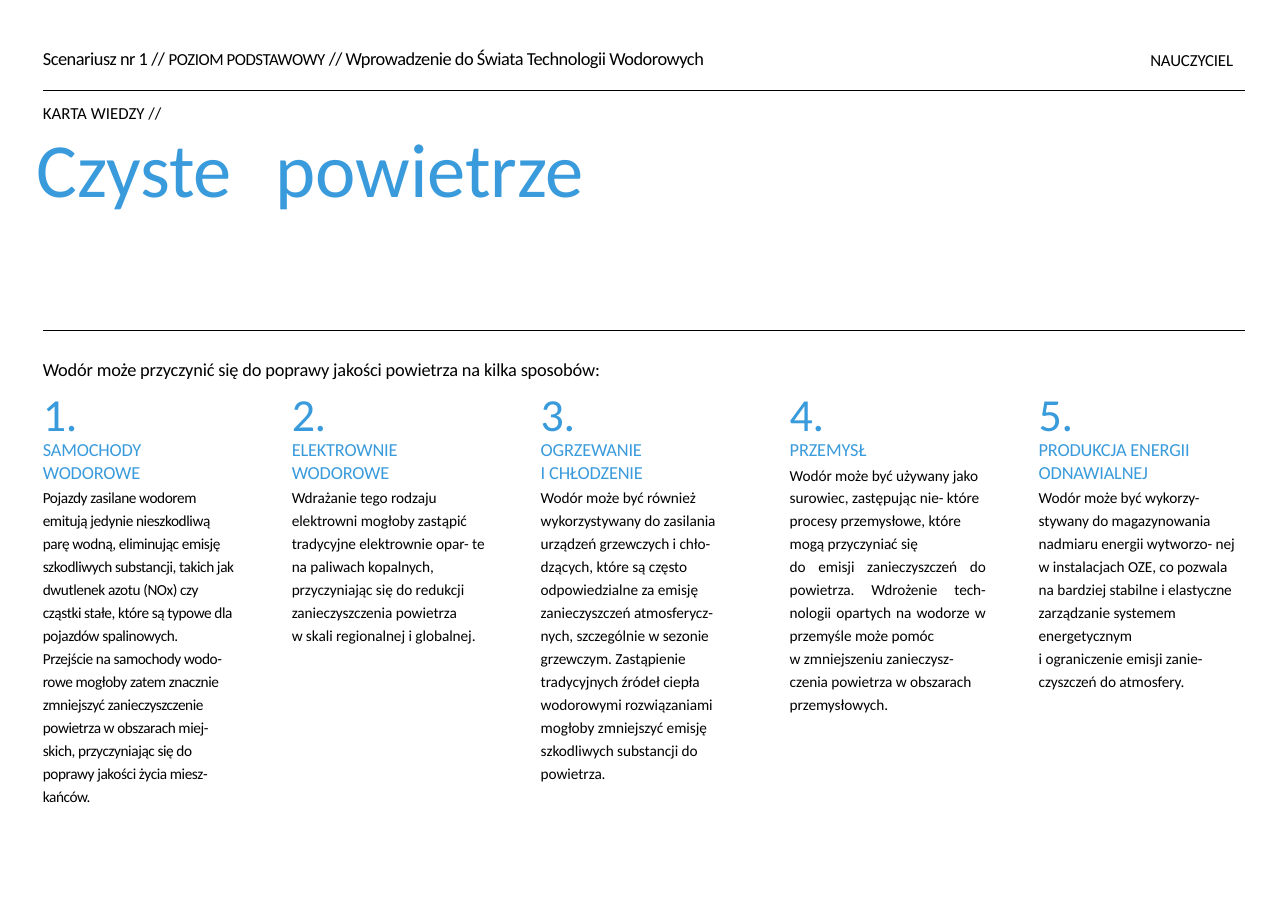
from lxml.etree import SubElement
from pptx import Presentation
from pptx.dml.color import RGBColor
from pptx.enum.shapes import MSO_CONNECTOR
from pptx.enum.text import MSO_ANCHOR, MSO_AUTO_SIZE, PP_ALIGN
from pptx.oxml.ns import qn
from pptx.util import Pt

COLORS = {"text": "000000", "accent": "3A9BDC"}
FONT = "Calibri"
LEFT, RIGHT = 28, 813.6
COLUMN_TOP, COLUMN_WIDTH, COLUMN_PITCH = 252.7, 128, 162.7

# Each column: height, letter spacing, heading lines, body paragraphs
COLUMNS = [
    (274, -0.25, ["SAMOCHODY", "WODOROWE"], [
        "Pojazdy zasilane wodorem emitują jedynie nieszkodliwą parę wodną, "
        "eliminując emisję szkodliwych substancji, takich jak dwutlenek azotu "
        "(NOx) czy cząstki stałe, które są typowe dla pojazdów spalinowych.",
        "Przejście na samochody wodo- rowe mogłoby zatem znacznie zmniejszyć "
        "zanieczyszczenie powietrza w obszarach miej- skich, przyczyniając się "
        "do poprawy jakości życia miesz- kańców."]),
    (169, -0.04, ["ELEKTROWNIE", "WODOROWE"], [
        "Wdrażanie tego rodzaju elektrowni mogłoby zastąpić tradycyjne "
        "elektrownie opar- te na paliwach kopalnych, przyczyniając się do "
        "redukcji zanieczyszczenia powietrza",
        "w skali regionalnej i globalnej."]),
    (259, -0.04, ["OGRZEWANIE", "I CHŁODZENIE"], [
        "Wodór może być również wykorzystywany do zasilania urządzeń grzewczych "
        "i chło- dzących, które są często odpowiedzialne za emisję "
        "zanieczyszczeń atmosferycz- nych, szczególnie w sezonie grzewczym. "
        "Zastąpienie tradycyjnych źródeł ciepła wodorowymi rozwiązaniami mogłoby "
        "zmniejszyć emisję szkodliwych substancji do powietrza."]),
    (214, -0.04, ["PRZEMYSŁ"], [
        "Wodór może być używany jako surowiec, zastępując nie- które procesy "
        "przemysłowe, które mogą przyczyniać się",
        "do emisji zanieczyszczeń do powietrza. Wdrożenie tech- nologii opartych "
        "na wodorze w przemyśle może pomóc",
        "w zmniejszeniu zanieczysz- czenia powietrza w obszarach przemysłowych."]),
    (199, -0.04, ["PRODUKCJA ENERGII", "ODNAWIALNEJ"], [
        "Wodór może być wykorzy- stywany do magazynowania nadmiaru energii "
        "wytworzo- nej w instalacjach OZE, co pozwala na bardziej stabilne "
        "i elastyczne zarządzanie systemem energetycznym",
        "i ograniczenie emisji zanie- czyszczeń do atmosfery."]),
]
JUSTIFIED = (3, 1)  # column and paragraph index


class Sheet:
    """Holds the current slide and the shared text and line style."""

    def __init__(self, slide):
        self.slide = slide

    def frame(self, sp, x, y, w, h):
        """Place a text shape and return its emptied frame without margins."""
        sp.left, sp.top, sp.width, sp.height = Pt(x), Pt(y), Pt(w), Pt(h)
        tf = sp.text_frame
        tf.word_wrap = True
        tf.auto_size = MSO_AUTO_SIZE.NONE
        tf.vertical_anchor = MSO_ANCHOR.TOP
        tf.margin_left = tf.margin_right = tf.margin_bottom = 0
        tf.margin_top = Pt(0.7)
        return tf

    def textbox(self, x, y, w, h):
        return self.frame(self.slide.shapes.add_textbox(0, 0, 0, 0), x, y, w, h)

    def title(self, text, x, y, w, h, tab):
        tf = self.frame(self.slide.shapes.title, x, y, w, h)
        p = self.paragraph(tf, text, 50, "accent", -0.1, line=57.6)
        tabs = SubElement(p._p.get_or_add_pPr(), qn("a:tabLst"))
        SubElement(tabs, qn("a:tab"), pos=str(Pt(tab)), algn="l")
        p._p.pPr.find(qn("a:defRPr")).addprevious(tabs)

    def run(self, p, text, spacing, size=None):
        r = p.add_run()
        r.text = text
        r._r.get_or_add_rPr().set("spc", str(round(spacing * 100)))
        if size:
            r.font.size = Pt(size)

    def paragraph(self, tf, text, size, color="text", spacing=-0.1,
                  before=0, line=None, align=PP_ALIGN.LEFT):
        """Fill the first paragraph if it is empty, otherwise add one."""
        p = tf.add_paragraph() if tf.paragraphs[0].runs else tf.paragraphs[0]
        p.alignment = align
        p.space_before = Pt(before)
        p.line_spacing = Pt(line) if line else 1.0
        p.font.name, p.font.size = FONT, Pt(size)
        p.font.color.rgb = RGBColor.from_string(COLORS[color])
        self.run(p, text, spacing)
        return p

    def rule(self, y):
        line = self.slide.shapes.add_connector(
            MSO_CONNECTOR.STRAIGHT, Pt(LEFT), Pt(y), Pt(RIGHT), Pt(y))
        line.line.width = Pt(0.5)
        line.line.color.rgb = RGBColor.from_string(COLORS["text"])
        SubElement(line._element.spPr, qn("a:effectLst"))

    def column(self, index, height, spacing, heading, body):
        tf = self.textbox(LEFT + index * COLUMN_PITCH, COLUMN_TOP, COLUMN_WIDTH, height)
        self.paragraph(tf, f"{index + 1}.", 30, "accent", -0.2, before=1, line=34.5)
        for i, text in enumerate(heading):
            self.paragraph(tf, text, 12, "accent", before=0.6 if i else 0,
                           line=None if i else 12.9)
        for i, text in enumerate(body):
            align = PP_ALIGN.JUSTIFY if (index, i) == JUSTIFIED else PP_ALIGN.LEFT
            self.paragraph(tf, text, 10, "text", spacing, before=0 if i else 0.6,
                           line=15, align=align)


def main():
    prs = Presentation()
    prs.slide_width, prs.slide_height = Pt(841.7), Pt(595.4)
    sheet = Sheet(prs.slides.add_slide(prs.slide_layouts[5]))

    tf = sheet.textbox(LEFT, 30.2, 478, 16.6)
    p = sheet.paragraph(tf, "Scenariusz nr 1 // ", 12, spacing=-0.3, before=1)
    sheet.run(p, "POZIOM PODSTAWOWY ", -0.3, 11)
    sheet.run(p, "// Wprowadzenie do Świata Technologii Wodorowych", -0.3)
    sheet.paragraph(sheet.textbox(751.7, 31.7, 63, 15), "NAUCZYCIEL", 11, before=1)

    for y in (59, 216):
        sheet.rule(y)

    sheet.paragraph(sheet.textbox(LEFT, 69.1, 360, 12.5), "KARTA WIEDZY //", 11,
                    spacing=0, before=1, line=10.8)
    sheet.title("Czyste\tpowietrze", 23.8, 81, 373, 58.5, tab=156.5)
    sheet.paragraph(sheet.textbox(LEFT, 233.3, 398, 16.6),
                    "Wodór może przyczynić się do poprawy jakości powietrza "
                    "na kilka sposobów:", 12, spacing=-0.12, before=1)

    for index, column in enumerate(COLUMNS):
        sheet.column(index, *column)

    prs.save("out.pptx")


if __name__ == "__main__":
    main()
